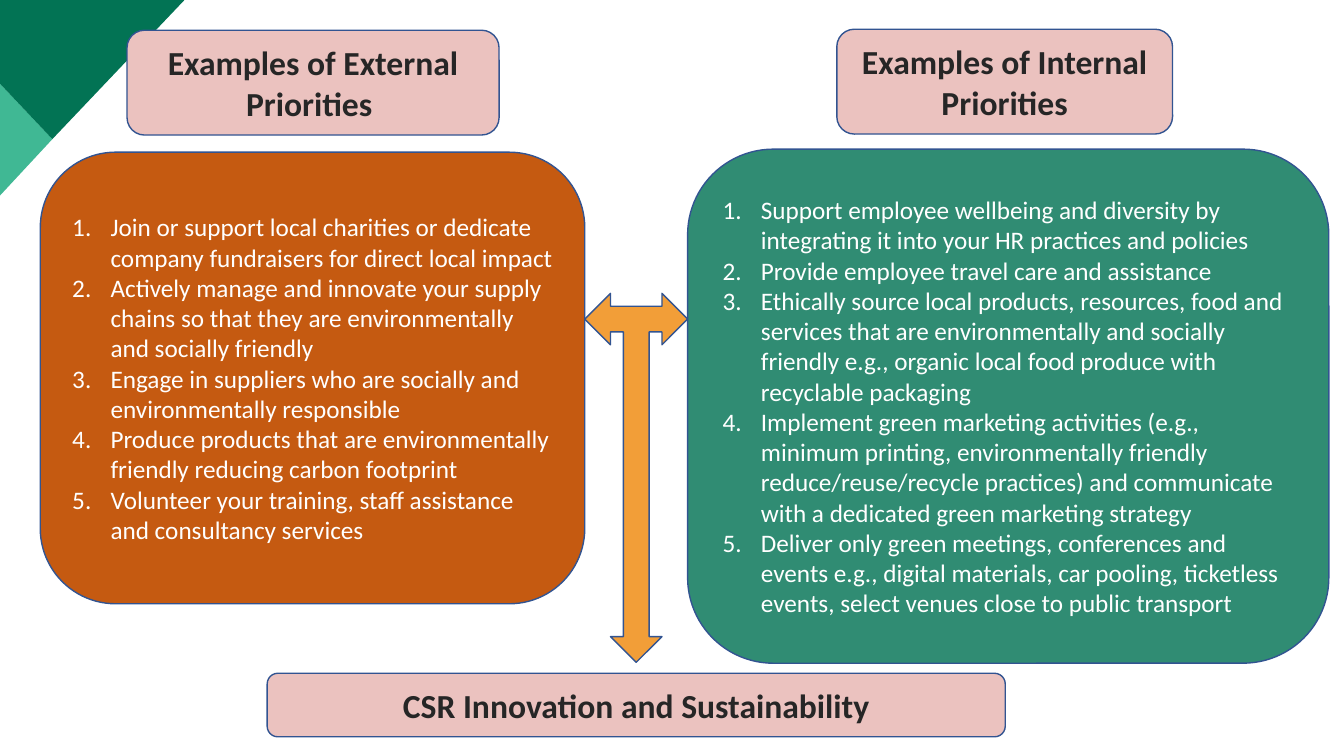
import pptx
import pptx.dml.color
import pptx.enum.shapes
import pptx.enum.text
import pptx.util
from dataclasses import dataclass
from lxml import etree
from pptx.util import Inches

SHAPES = pptx.enum.shapes.MSO_SHAPE


@dataclass(frozen=True)
class Theme:
    font: str = "Calibri"
    heading_size: int = 24
    list_size: int = 18
    outline_width: int = 1
    outline: str = "325491"
    heading_fill: str = "EBC2BF"
    heading_text: str = "262626"
    list_text: str = "FFFFFF"
    external: str = "C55A11"
    internal: str = "308C73"
    arrow: str = "F29E38"
    corner_light: str = "40B894"
    corner_dark: str = "027354"


THEME = Theme()

EXTERNAL_PRIORITIES = [
    "Join or support local charities or dedicate company fundraisers for direct local impact",
    "Actively manage and innovate your supply chains so that they are environmentally "
    "and socially friendly",
    "Engage in suppliers who are socially and environmentally responsible",
    "Produce products that are environmentally friendly reducing carbon footprint",
    "Volunteer your training, staff assistance and consultancy services",
]
INTERNAL_PRIORITIES = [
    "Support employee wellbeing and diversity by integrating it into your HR practices "
    "and policies",
    "Provide employee travel care and assistance",
    "Ethically source local products, resources, food and services that are environmentally "
    "and socially friendly e.g., organic local food produce with recyclable packaging",
    "Implement green marketing activities (e.g., minimum printing, environmentally friendly "
    "reduce/reuse/recycle practices) and communicate with a dedicated green marketing strategy",
    "Deliver only green meetings, conferences and events e.g., digital materials, car pooling, "
    "ticketless events, select venues close to public transport",
]


def rgb(color):
    return pptx.dml.color.RGBColor.from_string(color)


def paint(shape, color):
    shape.shadow.inherit = False
    shape.fill.solid()
    shape.fill.fore_color.rgb = rgb(color)


def add_corner(slide, points, color):
    start, *others = [(Inches(x), Inches(y)) for x, y in points]
    builder = slide.shapes.build_freeform(*start)
    builder.add_line_segments(others, close=True)
    corner = builder.convert_to_shape()
    paint(corner, color)
    corner.line.fill.background()


def add_outlined(slide, kind, box, color):
    shape = slide.shapes.add_shape(kind, *map(Inches, box))
    paint(shape, color)
    shape.line.color.rgb = rgb(THEME.outline)
    shape.line.width = pptx.util.Pt(THEME.outline_width)
    return shape


def add_text_box(slide, box, color):
    frame = add_outlined(slide, SHAPES.ROUNDED_RECTANGLE, box, color).text_frame
    frame.word_wrap = True
    frame.vertical_anchor = pptx.enum.text.MSO_ANCHOR.MIDDLE
    return frame


def add_run(paragraph, text, size, color, bold=False):
    run = paragraph.add_run()
    run.text = text
    run.font.name = THEME.font
    run.font.size = pptx.util.Pt(size)
    run.font.bold = bold
    run.font.color.rgb = rgb(color)


def add_heading(slide, box, text):
    paragraph = add_text_box(slide, box, THEME.heading_fill).paragraphs[0]
    paragraph.alignment = pptx.enum.text.PP_ALIGN.CENTER
    add_run(paragraph, text, THEME.heading_size, THEME.heading_text, bold=True)


def number_paragraph(paragraph):
    indent = Inches(0.38)
    properties = paragraph._p.get_or_add_pPr()
    properties.set("marL", str(indent))
    properties.set("indent", str(-indent))
    numbering = etree.SubElement(properties, pptx.oxml.ns.qn("a:buAutoNum"))
    numbering.set("type", "arabicPeriod")


def add_numbered_list(slide, box, color, items):
    frame = add_text_box(slide, box, color)
    for index, item in enumerate(items):
        paragraph = frame.add_paragraph() if index else frame.paragraphs[0]
        paragraph.alignment = pptx.enum.text.PP_ALIGN.LEFT
        number_paragraph(paragraph)
        add_run(paragraph, item, THEME.list_size, THEME.list_text)


def main():
    deck = pptx.Presentation()
    deck.slide_width, deck.slide_height = Inches(13.33), Inches(7.5)
    slide = deck.slides.add_slide(deck.slide_layouts[6])

    # Corner decoration
    add_corner(slide, [(0, 0.83), (0.52, 1.38), (0, 1.94)], THEME.corner_light)
    add_corner(slide, [(0, 0), (1.83, 0), (0.52, 1.38), (0, 0.83)], THEME.corner_dark)

    # External and internal priorities
    add_heading(slide, (1.26, 0.3, 3.69, 1.04), "Examples of External Priorities ")
    add_numbered_list(slide, (0.4, 1.51, 5.4, 4.48), THEME.external, EXTERNAL_PRIORITIES)
    add_heading(slide, (8.3, 0.29, 3.33, 1.04), "Examples of Internal Priorities")
    add_numbered_list(slide, (6.82, 1.48, 6.36, 5.1), THEME.internal, INTERNAL_PRIORITIES)

    # Arrow joining both lists and pointing down to the outcome
    arrow = add_outlined(slide, SHAPES.LEFT_RIGHT_UP_ARROW, (5.8, 2.91, 1.02, 3.66), THEME.arrow)
    arrow.rotation = 180

    # Outcome
    add_heading(slide, (2.65, 6.68, 7.32, 0.63), "CSR Innovation and Sustainability")

    deck.save("out.pptx")


if __name__ == "__main__":
    main()
